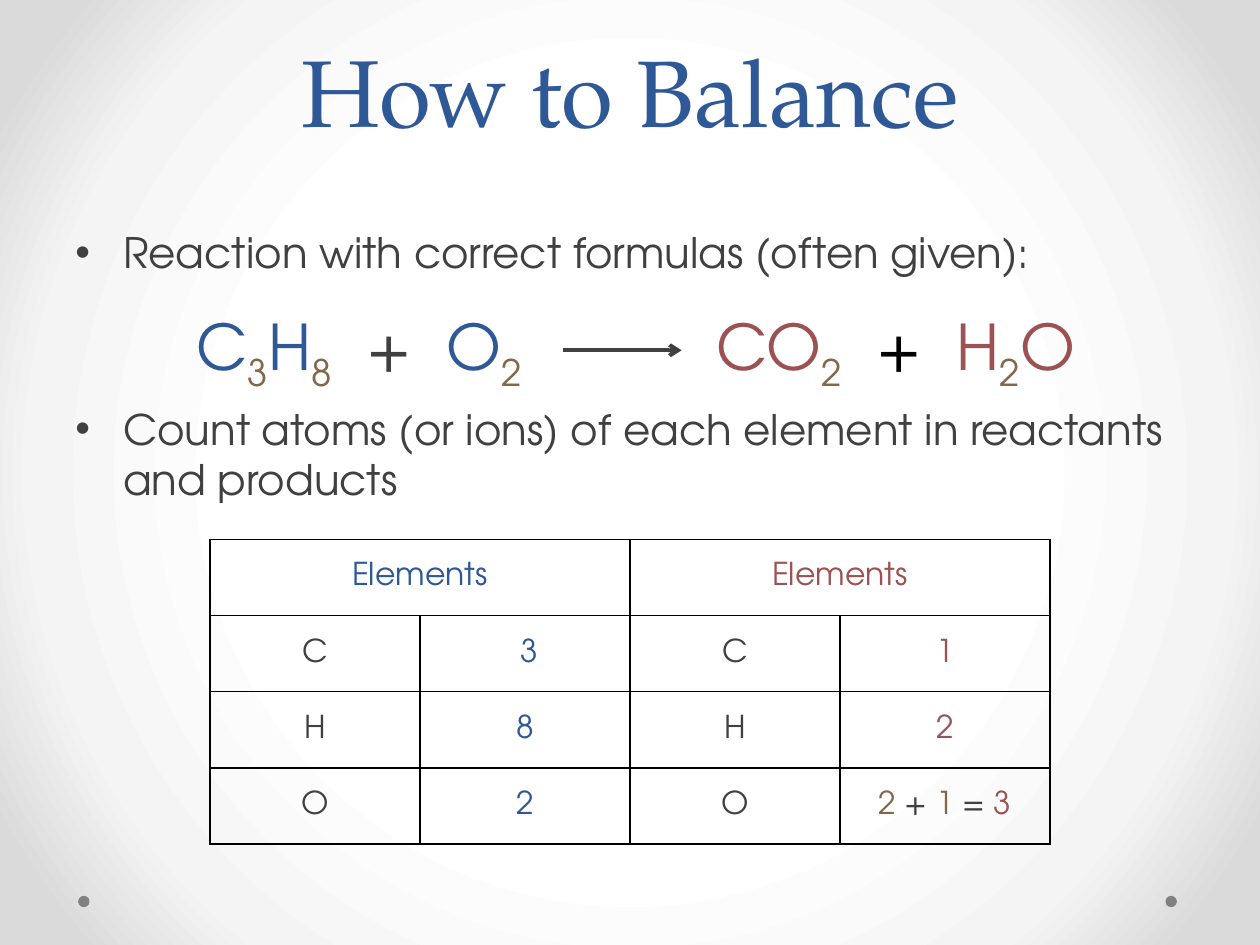
from dataclasses import dataclass

from lxml.etree import SubElement
from pptx import Presentation
from pptx.dml.color import RGBColor
from pptx.enum.shapes import MSO_CONNECTOR as Connector, MSO_SHAPE as Shape
from pptx.enum.text import MSO_ANCHOR as Anchor, MSO_AUTO_SIZE as AutoSize, PP_ALIGN as Align
from pptx.oxml.ns import qn
from pptx.util import Inches, Pt


@dataclass(frozen=True)
class Theme:
    heading_font: str = "TeX Gyre Pagella"
    body_font: str = "TeX Gyre Adventor"
    title_size: int = 54
    formula_size: int = 36
    body_size: int = 24
    table_size: int = 18
    reactant: str = "2F5897"
    product: str = "9C5252"
    count: str = "846648"
    text: str = "404040"
    black: str = "000000"
    dot: str = "808080"
    backdrop: tuple = ((0, "FFFFFF"), (50, "FFFFFF"), (76, "F4F4F4"), (92, "DADADA"), (100, "DADADA"))


THEME = Theme()
WIDTH, HEIGHT = 10, 7.5
COLUMN = WIDTH / 6
MARGIN = WIDTH / 20
WIDE_SPACE = Pt(10)

REACTANTS = [("C", THEME.reactant), ("3", THEME.count), ("H", THEME.reactant), ("8", THEME.count),
             (" ", THEME.text), ("+", THEME.text), (" ", THEME.text),
             ("O", THEME.reactant), ("2", THEME.count)]
PRODUCTS = [("CO", THEME.product), ("2", THEME.count),
            (" ", THEME.black), ("+", THEME.black), (" ", THEME.black),
            ("H", THEME.product), ("2", THEME.count), ("O", THEME.product)]
OXYGEN_SUM = [("2", THEME.count), (" + ", THEME.text), ("1", THEME.count),
              (" = ", THEME.text), ("3", THEME.product)]
ATOM_ROWS = [("C", " 3", [("1", THEME.product)]),
             ("H", "8", [("2", THEME.product)]),
             ("O", "2", OXYGEN_SUM)]


def box(left, top, width, height):
    return [Inches(length) for length in (left, top, width, height)]


def style_run(run, size, color, font=THEME.body_font):
    run.font.name = font
    run.font.size = Pt(size)
    run.font.color.rgb = RGBColor.from_string(color)


def add_runs(paragraph, parts, size):
    """Append (text, colour) parts and return their runs."""
    runs = []
    for text, color in parts:
        run = paragraph.add_run()
        run.text = text
        style_run(run, size, color)
        runs.append(run)
    return runs


def paint_background(slide):
    """Fill the background with a gradient that spreads from the centre."""
    slide.background.fill.gradient()
    gradient = next(slide.element.iter(qn("a:gradFill")))
    for child in list(gradient):
        gradient.remove(child)
    stops = SubElement(gradient, qn("a:gsLst"))
    for position, color in THEME.backdrop:
        stop = SubElement(stops, qn("a:gs"), pos=str(position * 1000))
        SubElement(stop, qn("a:srgbClr"), val=color)
    circle = SubElement(gradient, qn("a:path"), path="circle")
    SubElement(circle, qn("a:fillToRect"), l="50000", t="50000", r="50000", b="50000")


def add_dot(slide, left):
    dot = slide.shapes.add_shape(Shape.OVAL, *box(left, 7.11, 0.09, 0.09))
    dot.shadow.inherit = False
    dot.fill.solid()
    dot.fill.fore_color.rgb = RGBColor.from_string(THEME.dot)
    dot.line.fill.background()


def set_title(slide, text):
    title = slide.shapes.title
    title.left, title.top, title.width, title.height = box(MARGIN, 0, WIDTH - 2 * MARGIN, 1.21)
    frame = title.text_frame
    frame.text = text
    frame.auto_size = AutoSize.NONE
    frame.vertical_anchor = Anchor.BOTTOM
    paragraph = frame.paragraphs[0]
    paragraph.alignment = Align.CENTER
    paragraph.line_spacing = Pt(58)
    style_run(paragraph.runs[0], THEME.title_size, THEME.reactant, THEME.heading_font)


def add_bullets(slide, bullets):
    """Add (text, points of space before) bullets in one text box."""
    frame = slide.shapes.add_textbox(*box(MARGIN, 1.75, WIDTH - 2 * MARGIN, 2.4)).text_frame
    frame.word_wrap = True
    for index, (text, space) in enumerate(bullets):
        paragraph = frame.add_paragraph() if index else frame.paragraphs[0]
        paragraph.space_before = Pt(space)
        add_runs(paragraph, [(text, THEME.text)], THEME.body_size)
        properties = paragraph._p.get_or_add_pPr()
        indent = Inches(0.38)
        properties.set("marL", str(indent))
        properties.set("indent", str(-indent))
        bullet_color = SubElement(properties, qn("a:buClr"))
        SubElement(bullet_color, qn("a:srgbClr"), val=THEME.text)
        SubElement(properties, qn("a:buFont"), typeface="Arial")
        SubElement(properties, qn("a:buChar"), char="•")


def add_formula(shapes, left, width, parts):
    """Add one side of the equation, with its digits as subscripts."""
    frame = shapes.add_textbox(*box(left, 2.39, width, 0.71)).text_frame
    frame.word_wrap = True
    paragraph = frame.paragraphs[0]
    paragraph.alignment = Align.CENTER
    for run in add_runs(paragraph, parts, THEME.formula_size):
        if run.text.isdigit():
            run.font._element.set("baseline", "-25000")
        elif run.text == " ":
            run.font._element.set("spc", str(int(WIDE_SPACE.pt * 100)))


def add_arrow(shapes, start, end, y):
    arrow = shapes.add_connector(Connector.STRAIGHT, *box(start, y, end, y))
    arrow.line.color.rgb = RGBColor.from_string(THEME.text)
    arrow.line.width = Pt(2.25)
    SubElement(arrow.line._get_or_add_ln(), qn("a:tailEnd"), type="arrow")
    SubElement(arrow._element.spPr, qn("a:effectLst"))


def add_equation(slide):
    shapes = slide.shapes.add_group_shape().shapes
    add_formula(shapes, 1.39, 2.92, REACTANTS)
    add_formula(shapes, 5.48, 3.26, PRODUCTS)
    add_arrow(shapes, 4.47, 5.41, 2.78)


def style_cell(cell):
    cell.vertical_anchor = Anchor.MIDDLE
    properties = cell._tc.get_or_add_tcPr()
    for side in ("lnL", "lnR", "lnT", "lnB"):
        border = SubElement(properties, qn(f"a:{side}"), w=str(Pt(1)))
        fill = SubElement(border, qn("a:solidFill"))
        SubElement(fill, qn("a:srgbClr"), val=THEME.black)
    cell.fill.background()


def fill_cell(cell, parts):
    paragraph = cell.text_frame.paragraphs[0]
    paragraph.alignment = Align.CENTER
    add_runs(paragraph, parts, THEME.table_size)


def add_atom_table(slide):
    frame = slide.shapes.add_table(len(ATOM_ROWS) + 1, 4, *box(COLUMN, 4.28, 4 * COLUMN, 2.42))
    table = frame.table
    table.first_row = table.horz_banding = False
    for cell in table.iter_cells():
        style_cell(cell)
    for column, color in ((0, THEME.reactant), (2, THEME.product)):
        table.cell(0, column).merge(table.cell(0, column + 1))
        fill_cell(table.cell(0, column), [("Elements", color)])
    for row, (element, reactant_count, product_parts) in enumerate(ATOM_ROWS, 1):
        symbol = [(element, THEME.text)]
        contents = (symbol, [(reactant_count, THEME.reactant)], symbol, product_parts)
        for column, parts in enumerate(contents):
            fill_cell(table.cell(row, column), parts)


def main():
    presentation = Presentation()
    presentation.slide_width, presentation.slide_height = Inches(WIDTH), Inches(HEIGHT)
    slide = presentation.slides.add_slide(presentation.slide_layouts[5])
    paint_background(slide)
    for left in (9.25, 0.62):
        add_dot(slide, left)
    set_title(slide, "How to Balance")
    add_bullets(slide, [("Reaction with correct formulas (often given):", 0),
                        ("Count atoms (or ions) of each element in reactants and products", 72)])
    add_atom_table(slide)
    add_equation(slide)
    presentation.save("out.pptx")


if __name__ == "__main__":
    main()
